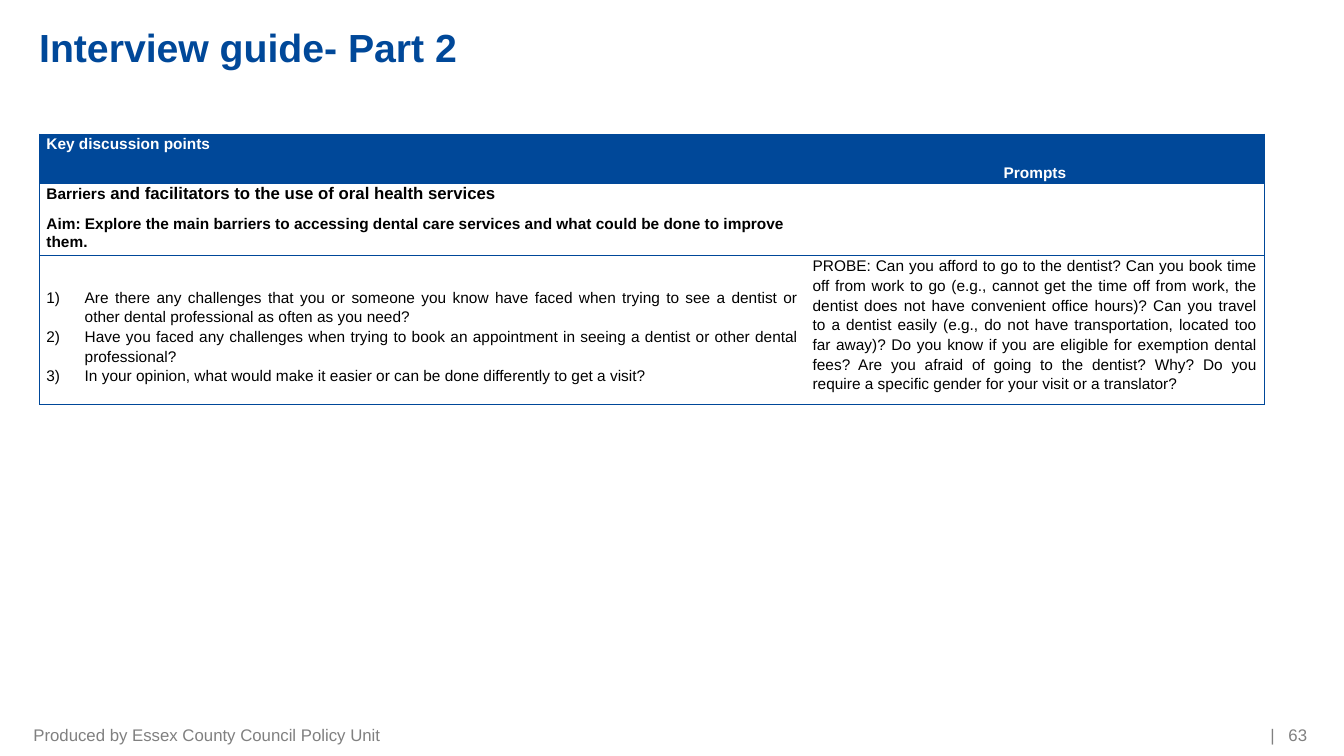
import dataclasses

import lxml.etree
import pptx
import pptx.dml.color
import pptx.enum.text
import pptx.oxml.ns
import pptx.util

ANCHOR = pptx.enum.text.MSO_ANCHOR
ALIGN = pptx.enum.text.PP_ALIGN


@dataclasses.dataclass(frozen=True)
class Theme:
    font: str = "Arial"
    blue: str = "004899"
    white: str = "FFFFFF"
    black: str = "000000"
    grey: str = "808080"
    title: int = 28
    heading: int = 12
    body: int = 11
    footer: int = 12
    border: float = 0.5


def add_element(parent, tag, **attributes):
    return lxml.etree.SubElement(parent, pptx.oxml.ns.qn(tag), attributes)


class Page:
    def __init__(self, deck, theme):
        self.theme = theme
        self.slide = deck.slides.add_slide(deck.slide_layouts[6])
        self.width, self.height = deck.slide_width, deck.slide_height

    def across(self, percent):
        return round(self.width * percent / 100)

    def down(self, percent):
        return round(self.height * percent / 100)

    def place(self, left, top, width, height):
        return self.across(left), self.down(top), self.across(width), self.down(height)

    def style(self, font, size, color, bold=False):
        font.name = self.theme.font
        font.size = pptx.util.Pt(size)
        font.bold = bold
        font.color.rgb = pptx.dml.color.RGBColor.from_string(color)

    def margins(self, holder, sides):
        for side, inches in zip(("left", "top", "right", "bottom"), sides):
            setattr(holder, f"margin_{side}", pptx.util.Inches(inches))

    def text(self, area, words, size, color, margins, anchor, bold=False, tab=None):
        frame = self.slide.shapes.add_textbox(*self.place(*area)).text_frame
        frame.word_wrap = True
        frame.vertical_anchor = anchor
        self.margins(frame, margins)
        para = frame.paragraphs[0]
        para.text = words
        if tab:
            stops = add_element(para._p.get_or_add_pPr(), "a:tabLst")
            add_element(stops, "a:tab", pos=str(pptx.util.Inches(tab)), algn="l")
        for span in para.runs:
            self.style(span.font, size, color, bold)

    def table(self, left, top, columns, rows):
        area = self.place(left, top, sum(columns), sum(rows))
        table = self.slide.shapes.add_table(len(rows), len(columns), *area).table
        table.first_row = table.horz_banding = False
        for column, share in zip(table.columns, columns):
            column.width = self.across(share)
        for row, share in zip(table.rows, rows):
            row.height = self.down(share)
        return table

    def cell(self, cell, paragraphs, color, fill, bold, edges, top=0,
             align=ALIGN.LEFT, spacing=1.07, gap=8, numbered=False):
        self.margins(cell, (0.07, top, 0.07, 0))
        cell.vertical_anchor = ANCHOR.TOP
        cell.fill.solid()
        cell.fill.fore_color.rgb = pptx.dml.color.RGBColor.from_string(fill)
        self.borders(cell, edges)
        cell.text_frame.text = "\n".join(paragraphs)
        for index, para in enumerate(cell.text_frame.paragraphs):
            para.alignment = align
            para.line_spacing = spacing
            if index:
                para.space_before = pptx.util.Pt(gap)
            if numbered:
                self.number(para)
            self.style(para.font, self.theme.body, color, bold)
            for span in para.runs:
                self.style(span.font, self.theme.body, color, bold)

    def number(self, para):
        properties = para._p.get_or_add_pPr()
        indent = pptx.util.Inches(0.38)
        properties.set("marL", str(indent))
        properties.set("indent", str(-indent))
        add_element(properties, "a:buFont", typeface="+mj-lt")
        add_element(properties, "a:buAutoNum", type="arabicParenR")

    def borders(self, cell, edges):
        properties = cell._tc.get_or_add_tcPr()
        for index, side in enumerate("LRTB"):
            line = add_element(properties, f"a:ln{side}",
                               w=str(pptx.util.Pt(self.theme.border)))
            if side in edges:
                add_element(add_element(line, "a:solidFill"),
                            "a:srgbClr", val=self.theme.blue)
            else:
                add_element(line, "a:noFill")
            properties.insert(index, line)


def add_guide(page):
    theme = page.theme
    table = page.table(2.93, 17.73, (57.01, 34.13), (6.27, 8.93, 18.27))
    header = dict(color=theme.white, fill=theme.blue, bold=True)
    aim = dict(color=theme.black, fill=theme.white, bold=True)
    body = dict(color=theme.black, fill=theme.white, bold=False,
                align=ALIGN.JUSTIFY, spacing=1.15, gap=0)

    page.cell(table.cell(0, 0), ["Key discussion points"], edges="LTB", **header)
    page.cell(table.cell(0, 1), ["Prompts"], edges="RTB", top=0.29,
              align=ALIGN.CENTER, **header)

    page.cell(table.cell(1, 0), [
        "Barriers",
        "Aim: Explore the main barriers to accessing dental care services and what "
        "could be done to improve them.",
    ], edges="LTB", **aim)
    span = table.cell(1, 0).text_frame.paragraphs[0].add_run()
    span.text = " and facilitators to the use of oral health services"
    page.style(span.font, theme.heading, theme.black, True)
    page.cell(table.cell(1, 1), [], edges="RTB", **aim)

    page.cell(table.cell(2, 0), [
        "Are there any challenges that you or someone you know have faced when trying "
        "to see a dentist or other dental professional as often as you need?",
        "Have you faced any challenges when trying to book an appointment in seeing a "
        "dentist or other dental professional?",
        "In your opinion, what would make it easier or can be done differently to get "
        "a visit?",
    ], edges="LTB", top=0.31, numbered=True, **body)
    page.cell(table.cell(2, 1), [
        "PROBE: Can you afford to go to the dentist? Can you book time off from work to "
        "go (e.g., cannot get the time off from work, the dentist does not have "
        "convenient office hours)? Can you travel to a dentist easily (e.g., do not have "
        "transportation, located too far away)? Do you know if you are eligible for "
        "exemption dental fees? Are you afraid of going to the dentist? Why? Do you "
        "require a specific gender for your visit or a translator?",
    ], edges="RTB", **body)


def main():
    deck = pptx.Presentation()
    deck.slide_width = pptx.util.Inches(13.33)
    deck.slide_height = pptx.util.Inches(7.5)
    theme = Theme()
    page = Page(deck, theme)
    page.text((2.18, 1.47, 62.19, 7.87), "Interview guide- Part 2", theme.title,
              theme.blue, (0.1, 0.05, 0.1, 0), ANCHOR.BOTTOM, bold=True)
    add_guide(page)
    page.text((90.92, 96.13, 6.38, 2), "|\t63", theme.footer, theme.grey,
              (0.48, 0.05, 0, 0.05), ANCHOR.MIDDLE, tab=0.18)
    page.text((2.48, 96.13, 47.26, 2), "Produced by Essex County Council Policy Unit",
              theme.footer, theme.grey, (0, 0.05, 0.1, 0.05), ANCHOR.MIDDLE)
    deck.save("out.pptx")


if __name__ == "__main__":
    main()
